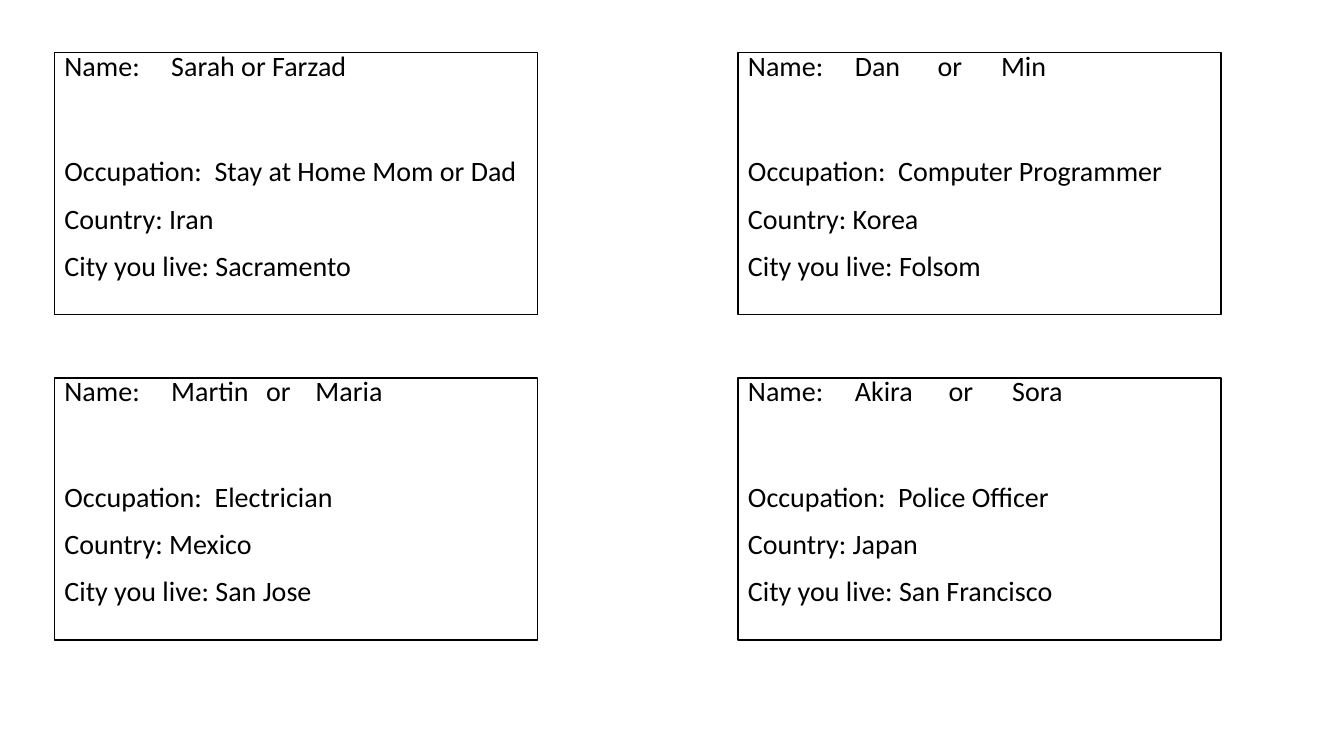
from pptx import Presentation, util as u
from pptx.dml.color import RGBColor
from pptx.enum import shapes, text
from pptx.oxml import parse_xml
from pptx.oxml.ns import nsdecls

THEME = {
    "font": "Calibri",
    "size": u.Pt(20),
    "ink": RGBColor(0, 0, 0),
    "paper": RGBColor(255, 255, 255),
    "line": u.Pt(1),
}
LEFT, TOP = 0.54, 0.52
COLUMN_STEP, ROW_STEP = 6.78, 3.23
CARD_WIDTH, CARD_HEIGHT = 4.79, 2.6

CARDS = [
    [
        ("Sarah or Farzad", [], "Stay at Home Mom or Dad", "Iran", "Sacramento"),
        ("Dan\tor\tMin", [1.88, 2.51], "Computer Programmer", "Korea", "Folsom"),
    ],
    [
        ("Martin\tor\tMaria", [2.0, 2.49], "Electrician", "Mexico", "San Jose"),
        ("Akira\tor\tSora", [1.99, 2.62], "Police Officer", "Japan", "San Francisco"),
    ],
]


def write(paragraph, words, after=8, stops=()):
    paragraph.alignment = text.PP_ALIGN.LEFT
    paragraph.line_spacing = 1.07
    paragraph.space_after = u.Pt(after)
    run = paragraph.add_run()
    run.text = words
    run.font.name = THEME["font"]
    run.font.size = THEME["size"]
    run.font.color.rgb = THEME["ink"]
    if stops:
        tabs = "".join(f'<a:tab pos="{u.Inches(stop)}" algn="l"/>' for stop in stops)
        properties = paragraph._p.get_or_add_pPr()
        properties.append(parse_xml(f'<a:tabLst {nsdecls("a")}>{tabs}</a:tabLst>'))


presentation = Presentation()
presentation.slide_width = u.Inches(13.33)
presentation.slide_height = u.Inches(7.5)
slide = presentation.slides.add_slide(presentation.slide_layouts[6])

for row, cards in enumerate(CARDS):
    for column, (names, name_stops, occupation, country, city) in enumerate(cards):
        card = slide.shapes.add_shape(
            shapes.MSO_SHAPE.RECTANGLE,
            u.Inches(LEFT + column * COLUMN_STEP),
            u.Inches(TOP + row * ROW_STEP),
            u.Inches(CARD_WIDTH),
            u.Inches(CARD_HEIGHT),
        )
        card.shadow.inherit = False
        card.fill.solid()
        card.fill.fore_color.rgb = THEME["paper"]
        card.line.color.rgb = THEME["ink"]
        card.line.width = THEME["line"]

        frame = card.text_frame
        frame.word_wrap = True
        frame.vertical_anchor = text.MSO_ANCHOR.MIDDLE
        frame.margin_top = 0
        frame.margin_bottom = u.Inches(0.39)

        write(frame.paragraphs[0], f"Name:\t{names}", after=50, stops=[1.06, *name_stops])
        write(frame.add_paragraph(), f"Occupation:\t{occupation}", stops=[1.49])
        write(frame.add_paragraph(), f"Country: {country}")
        write(frame.add_paragraph(), f"City you live: {city}")

presentation.save("out.pptx")
